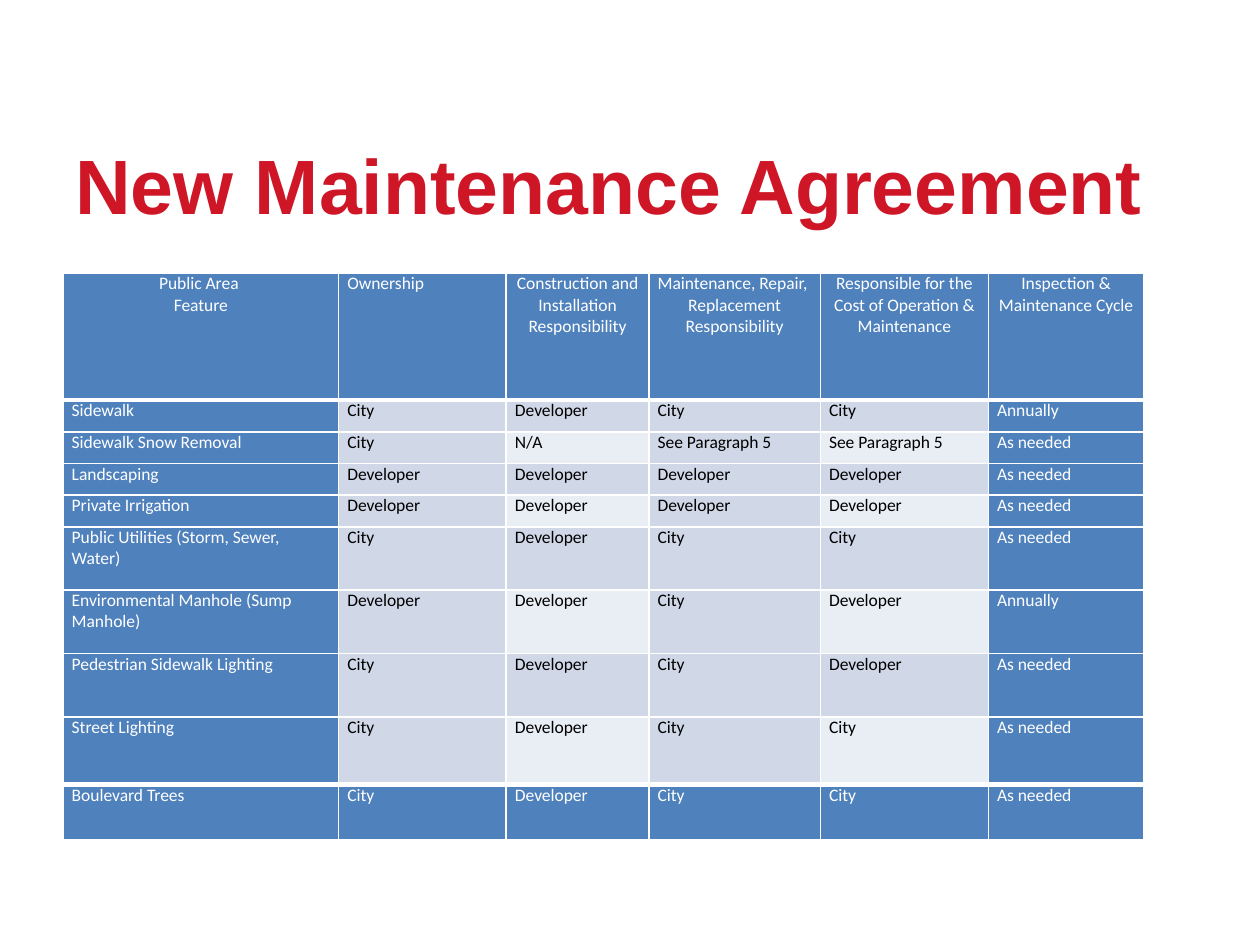
from dataclasses import dataclass

from lxml.etree import SubElement
from pptx import Presentation
from pptx.dml.color import RGBColor
from pptx.enum.text import MSO_ANCHOR, PP_ALIGN
from pptx.oxml.ns import qn
from pptx.util import Pt


@dataclass(frozen=True)
class Theme:
    red: str = "CE1627"
    blue: str = "4F81BD"
    band_dark: str = "D0D8E8"
    band_light: str = "E9EDF4"
    white: str = "FFFFFF"
    black: str = "000000"
    title_font: str = "Arial"
    body_font: str = "Calibri"
    title_size: int = 44
    body_size: int = 10


THEME = Theme()


def style_text(frame, font_name, size, color):
    for paragraph in frame.paragraphs:
        for run in paragraph.runs:
            run.font.name = font_name
            run.font.size = Pt(size)
            run.font.color.rgb = RGBColor.from_string(color)


def add_borders(cell, top, bottom):
    """Draw white cell borders; top and bottom are widths in points."""
    properties = cell._tc.get_or_add_tcPr()
    for side, width in (("L", 1), ("R", 1), ("T", top), ("B", bottom)):
        line = SubElement(properties, qn(f"a:ln{side}"), w=str(Pt(width)))
        fill = SubElement(line, qn("a:solidFill"))
        SubElement(fill, qn("a:srgbClr"), val=THEME.white)


presentation = Presentation()
presentation.slide_width, presentation.slide_height = Pt(720), Pt(540)
slide = presentation.slides.add_slide(presentation.slide_layouts[6])

# Title
title = slide.shapes.add_textbox(Pt(36), Pt(60), Pt(648), Pt(90)).text_frame
title.word_wrap = True
title.vertical_anchor = MSO_ANCHOR.MIDDLE
title.text = "New Maintenance Agreement"
style_text(title, THEME.title_font, THEME.title_size, THEME.red)
title.paragraphs[0].runs[0].font.bold = True

# Responsibility table
HEADER = [
    "Public Area \nFeature",
    "Ownership",
    "Construction and Installation Responsibility",
    "Maintenance, Repair, \vReplacement Responsibility",
    "Responsible for the Cost of Operation & Maintenance",
    "Inspection & Maintenance Cycle",
]
FEATURES = [
    ("Sidewalk", "City", "Developer", "City", "City", "Annually"),
    ("Sidewalk Snow Removal", "City", "N/A", "See Paragraph 5", "See Paragraph 5", "As needed"),
    ("Landscaping", "Developer", "Developer", "Developer", "Developer", "As needed"),
    ("Private Irrigation", "Developer", "Developer", "Developer", "Developer", "As needed"),
    ("Public Utilities (Storm, Sewer, Water)", "City", "Developer", "City", "City", "As needed"),
    ("Environmental Manhole (Sump Manhole)", "Developer", "Developer", "City", "Developer", "Annually"),
    ("Pedestrian Sidewalk Lighting", "City", "Developer", "City", "Developer", "As needed"),
    ("Street Lighting", "City", "Developer", "City", "City", "As needed"),
    ("Boulevard Trees", "City", "Developer", "City", "City", "As needed"),
]
rows = [HEADER, *FEATURES]
column_widths = [157.5, 95.8, 81.5, 98, 96, 88.8]
row_heights = [72.5] + [18.1] * 4 + [36.2] * 3 + [38.7, 31.5]
last_row, last_column = len(rows) - 1, len(HEADER) - 1

table = slide.shapes.add_table(
    len(rows), len(HEADER), Pt(36), Pt(156.2), Pt(sum(column_widths)), Pt(sum(row_heights))
).table
table.first_row = table.horz_banding = False
for column, width in zip(table.columns, column_widths):
    column.width = Pt(width)

for row_index, (texts, height) in enumerate(zip(rows, row_heights)):
    table.rows[row_index].height = Pt(height)
    for column_index, text in enumerate(texts):
        cell = table.cell(row_index, column_index)
        cell.margin_left = cell.margin_right = Pt(5)
        cell.margin_top = cell.margin_bottom = 0

        on_edge = row_index in (0, last_row) or column_index in (0, last_column)
        light = row_index % 2 == 0 and column_index % 2 == 0
        band = THEME.band_light if light else THEME.band_dark
        add_borders(
            cell,
            top=3 if row_index == last_row else 1,
            bottom=3 if row_index == 0 else 1,
        )
        cell.fill.solid()
        cell.fill.fore_color.rgb = RGBColor.from_string(THEME.blue if on_edge else band)

        cell.text_frame.text = text
        style_text(
            cell.text_frame, THEME.body_font, THEME.body_size,
            THEME.white if on_edge else THEME.black,
        )
        if row_index == 0 and column_index != 1:
            for paragraph in cell.text_frame.paragraphs:
                paragraph.alignment = PP_ALIGN.CENTER

presentation.save("out.pptx")
